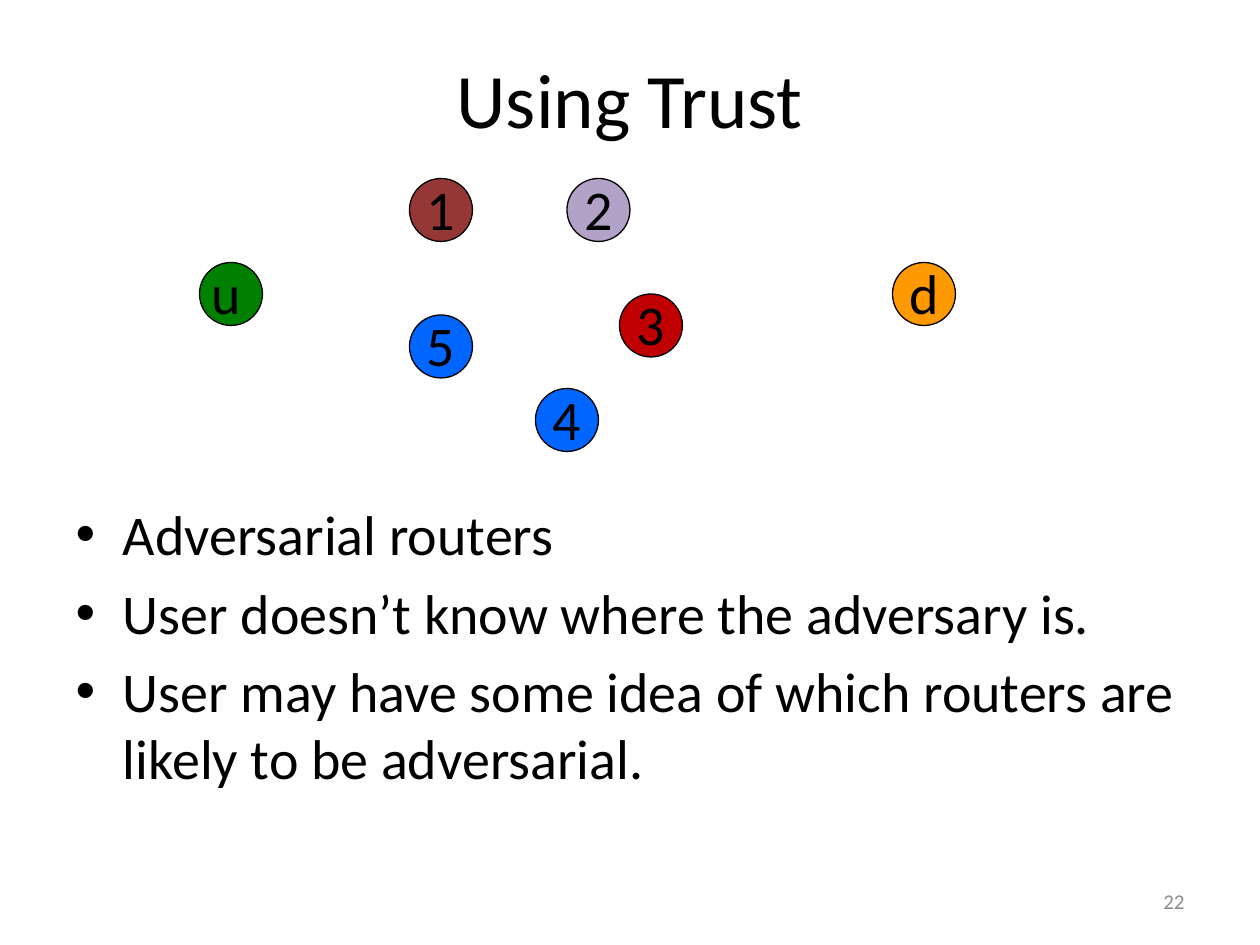
from pptx import Presentation, util as u
from pptx.dml.color import RGBColor
from pptx.enum import shapes, text

BLACK = RGBColor(0x00, 0x00, 0x00)
GRAY = RGBColor(0x8C, 0x8C, 0x8C)
BROWN = RGBColor(0x95, 0x37, 0x35)
LILAC = RGBColor(0xB3, 0xA2, 0xC7)
BLUE = RGBColor(0x00, 0x66, 0xFF)
RED = RGBColor(0xC0, 0x00, 0x00)
ORANGE = RGBColor(0xFF, 0x99, 0x00)
GREEN = RGBColor(0x00, 0x80, 0x00)
FONT = "Calibri"
LEFT, CENTER, RIGHT = text.PP_ALIGN.LEFT, text.PP_ALIGN.CENTER, text.PP_ALIGN.RIGHT

HEADING = "Using Trust"
PAGE = "22"
POINTS = [
    "Adversarial routers",
    "User doesn’t know where the adversary is.",
    "User may have some idea of which routers are likely to be adversarial.",
]
NODES = [
    ("1", 39, 17, BROWN, CENTER),
    ("2", 54, 17, LILAC, CENTER),
    ("5", 39, 30, BLUE, CENTER),
    ("3", 59, 28, RED, CENTER),
    ("4", 51, 37, BLUE, CENTER),
    ("d", 85, 25, ORANGE, CENTER),
    ("u", 19, 25, GREEN, LEFT),
]
COLUMNS, ROWS = 120, 90
NODE_CELLS = 6
LABEL_RISE, LABEL_ROWS = 1, 7.5

deck = Presentation()
deck.slide_width, deck.slide_height = u.Inches(10), u.Inches(7.5)
slide = deck.slides.add_slide(deck.slide_layouts[1])


def box(column, row, columns, rows):
    across, down = deck.slide_width / COLUMNS, deck.slide_height / ROWS
    return [round(n) for n in (column * across, row * down, columns * across, rows * down)]


def place(holder, area):
    holder.left, holder.top, holder.width, holder.height = area


def style(frame, size, color=BLACK, align=None):
    for paragraph in frame.paragraphs:
        paragraph.alignment = align
        for run in paragraph.runs:
            run.font.name, run.font.size = FONT, u.Pt(size)
            run.font.color.rgb = color


def add_label(words, area, size, color, align, anchor):
    frame = slide.shapes.add_textbox(*area).text_frame
    frame.word_wrap = True
    frame.vertical_anchor = anchor
    frame.text = words
    style(frame, size, color, align)


heading = slide.shapes.title
place(heading, box(6, 3.6, 108, 11.4))
heading.text_frame.text = HEADING
style(heading.text_frame, 44, align=CENTER)

add_label(PAGE, box(86, 83.4, 28, 4.8), 12, GRAY, RIGHT, text.MSO_ANCHOR.MIDDLE)

for name, column, row, color, align in NODES:
    node = slide.shapes.add_shape(shapes.MSO_SHAPE.OVAL, *box(column, row, NODE_CELLS, NODE_CELLS))
    node.shadow.inherit = False
    node.fill.solid()
    node.fill.fore_color.rgb = color
    node.line.color.rgb = BLACK
    node.line.width = u.Pt(0.75)

for name, column, row, color, align in NODES:
    area = box(column, row - LABEL_RISE, NODE_CELLS, LABEL_ROWS)
    add_label(name, area, 32, BLACK, align, text.MSO_ANCHOR.TOP)

points = slide.placeholders[1]
place(points, box(6, 47, 108, 33.4))
points.text_frame.text = "\n".join(POINTS)
style(points.text_frame, 32)

deck.save("out.pptx")
